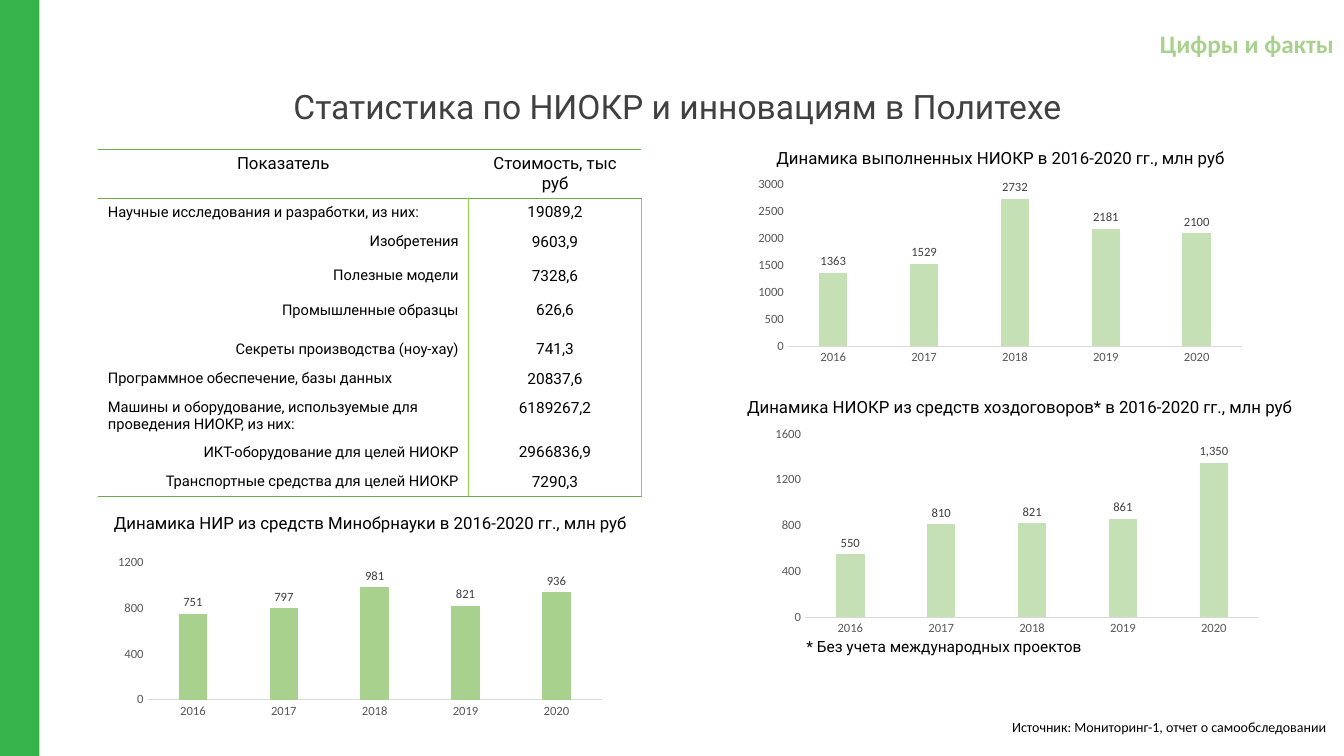
from dataclasses import dataclass

from lxml import etree
from pptx import Presentation
from pptx.chart.data import CategoryChartData
from pptx.dml.color import RGBColor
from pptx.enum.chart import XL_CHART_TYPE, XL_LABEL_POSITION, XL_TICK_MARK
from pptx.enum.shapes import MSO_SHAPE
from pptx.enum.text import MSO_AUTO_SIZE, PP_ALIGN
from pptx.oxml.ns import qn
from pptx.util import Inches, Pt

LEFT, CENTER, RIGHT = PP_ALIGN.LEFT, PP_ALIGN.CENTER, PP_ALIGN.RIGHT
COLUMNS = XL_CHART_TYPE.COLUMN_CLUSTERED
OUTSIDE = XL_LABEL_POSITION.OUTSIDE_END
NO_TICK = XL_TICK_MARK.NONE
GROW, FIXED = MSO_AUTO_SIZE.SHAPE_TO_FIT_TEXT, MSO_AUTO_SIZE.NONE

COLORS = {
    "band": "37B34B", "leaf": "A9D18E", "pale": "C5E0B4", "rule": "70AD47",
    "lime": "92D050", "black": "000000", "title": "404040", "axis": "595959",
    "axis_line": "D9D9D9",
}
BODY_FONT, CHART_FONT = "Roboto", "Calibri"
YEARS = ["2016", "2017", "2018", "2019", "2020"]


@dataclass
class Label:
    text: str
    left: float
    top: float
    width: float
    height: float
    size: float = 12
    align: PP_ALIGN = CENTER
    font: str = BODY_FONT
    color: str = "black"
    bold: bool = False
    line_spacing: float = 1.0
    auto_size: MSO_AUTO_SIZE = GROW


@dataclass
class YearChart:
    left: float
    top: float
    height: float
    values: list[int]
    color: str
    axis_max: int
    axis_step: int
    label_format: str = "0"


@dataclass
class Indicator:
    name: str
    cost: str
    height: float = 0.29
    nested: bool = False


LABELS = [
    Label("Цифры и факты", 10.76, 0.23, 2.57, 0.4, 18, RIGHT, CHART_FONT, "leaf", True),
    Label("Статистика по НИОКР и инновациям в Политехе", 0.97, 0.85, 11.5, 1.45, 24,
          color="title", line_spacing=0.9, auto_size=FIXED),
    Label("Источник: Мониторинг-1, отчет о самообследовании", 7.59, 7.08, 5.66, 0.27, 10,
          RIGHT, CHART_FONT),
    Label("Динамика выполненных НИОКР в 2016-2020 гг., млн руб", 7.05, 1.42, 5.75, 0.3),
    Label("Динамика НИОКР из средств хоздоговоров* в 2016-2020 гг., млн руб",
          7.24, 3.89, 5.75, 0.3),
    Label("* Без учета международных проектов", 7.9, 6.27, 5.18, 0.29, 11, LEFT),
    Label("Динамика НИР из средств Минобрнауки в 2016-2020 гг., млн руб",
          0.8, 5.04, 5.75, 0.3),
]

CHARTS = [
    YearChart(7.42, 1.72, 1.94, [1363, 1529, 2732, 2181, 2100], "pale", 3000, 500),
    YearChart(7.59, 4.19, 2.16, [550, 810, 821, 861, 1350], "pale", 1600, 400, "#,##0"),
    YearChart(1.07, 5.47, 1.69, [751, 797, 981, 821, 936], "leaf", 1200, 400),
]

INDICATORS = [
    Indicator("Научные исследования и разработки, из них:", "19089,2"),
    Indicator("Изобретения", "9603,9", 0.34, True),
    Indicator("Полезные модели", "7328,6", 0.34, True),
    Indicator("Промышленные образцы", "626,6", 0.39, True),
    Indicator("Секреты производства (ноу-хау)", "741,3", nested=True),
    Indicator("Программное обеспечение, базы данных", "20837,6"),
    Indicator("Машины и оборудование, используемые для проведения НИОКР, из них:",
              "6189267,2", 0.43),
    Indicator("ИКТ-оборудование для целей НИОКР", "2966836,9", nested=True),
    Indicator("Транспортные средства для целей НИОКР", "7290,3", nested=True),
]


def rgb(name: str) -> RGBColor:
    return RGBColor.from_string(COLORS[name])


def style_font(font, name: str, size: float, color: str, bold: bool = False) -> None:
    font.name, font.size, font.bold = name, Pt(size), bold
    font.color.rgb = rgb(color)


def write(frame, text: str, align: PP_ALIGN, font: str, size: float,
          color: str = "black", bold: bool = False) -> None:
    para = frame.paragraphs[0]
    para.alignment = align
    span = para.add_run()
    span.text = text
    style_font(span.font, font, size, color, bold)


def add_label(slide, label: Label) -> None:
    box = slide.shapes.add_textbox(Inches(label.left), Inches(label.top),
                                   Inches(label.width), Inches(label.height))
    frame = box.text_frame
    frame.word_wrap = True
    frame.auto_size = label.auto_size
    write(frame, label.text, label.align, label.font, label.size, label.color, label.bold)
    frame.paragraphs[0].line_spacing = label.line_spacing


def add_year_chart(slide, item: YearChart) -> None:
    data = CategoryChartData()
    data.categories = YEARS
    data.add_series("Series 1", item.values)
    chart = slide.shapes.add_chart(COLUMNS, Inches(item.left), Inches(item.top),
                                   Inches(5), Inches(item.height), data).chart
    chart.has_legend = chart.has_title = False
    style_font(chart.font, CHART_FONT, 10, "black")

    for axis in (chart.category_axis, chart.value_axis):
        axis.has_major_gridlines = False
        axis.major_tick_mark = axis.minor_tick_mark = NO_TICK
        style_font(axis.tick_labels.font, CHART_FONT, 9, "axis")
    chart.category_axis.format.line.color.rgb = rgb("axis_line")
    chart.category_axis.format.line.width = Pt(0.75)
    values = chart.value_axis
    values.format.line.fill.background()
    values.minimum_scale, values.maximum_scale = 0, item.axis_max
    values.major_unit = item.axis_step
    values.tick_labels.number_format = "0"
    values.tick_labels.number_format_is_linked = False

    plot = chart.plots[0]
    plot.gap_width, plot.overlap, plot.vary_by_categories = 219, -27, False
    bars = plot.series[0]
    bars.format.fill.solid()
    bars.format.fill.fore_color.rgb = rgb(item.color)
    labels = bars.data_labels
    labels.show_value, labels.position = True, OUTSIDE
    labels.number_format, labels.number_format_is_linked = item.label_format, False
    style_font(labels.font, CHART_FONT, 9, "title")


def set_borders(cell, borders: dict[str, str]) -> None:
    """Draw the named sides (L, R, T, B) and hide the others."""
    properties = cell._tc.get_or_add_tcPr()
    for side in "LRTB":
        line = etree.SubElement(properties, qn(f"a:ln{side}"), w=str(Pt(1)))
        if side in borders:
            fill = etree.SubElement(line, qn("a:solidFill"))
            etree.SubElement(fill, qn("a:srgbClr"), val=COLORS[borders[side]])
        else:
            etree.SubElement(line, qn("a:noFill"))


def add_cost_table(slide) -> None:
    rows = [Indicator("Показатель", "Стоимость, тыс руб", 0.33), *INDICATORS]
    table = slide.shapes.add_table(len(rows), 2, Inches(0.97), Inches(1.48), Inches(5.39),
                                   Inches(sum(row.height for row in rows))).table
    table.first_row = table.horz_banding = False
    table.columns[0].width, table.columns[1].width = Inches(3.68), Inches(1.71)
    for index, row in enumerate(rows):
        table.rows[index].height = Inches(row.height)
        header = index == 0
        name_align = CENTER if header else RIGHT if row.nested else LEFT
        cells = [(row.name, name_align, 10.5, "R"), (row.cost, CENTER, 11, "LR")]
        for column, (text, align, size, sides) in enumerate(cells):
            cell = table.cell(index, column)
            borders = {} if header else dict.fromkeys(sides, "lime")
            if index <= 1:
                borders["T"] = "rule"
            if header or index == len(rows) - 1:
                borders["B"] = "rule"
            set_borders(cell, borders)
            cell.fill.background()
            write(cell.text_frame, text, align, BODY_FONT, 12 if header else size)


def main() -> None:
    deck = Presentation()
    deck.slide_width, deck.slide_height = Inches(13.33), Inches(7.5)
    page = deck.slides.add_slide(deck.slide_layouts[6])
    band = page.shapes.add_shape(MSO_SHAPE.RECTANGLE, 0, 0, Inches(0.39), Inches(7.5))
    band.shadow.inherit = False
    band.fill.solid()
    band.fill.fore_color.rgb = rgb("band")
    band.line.fill.background()
    add_cost_table(page)
    for chart in CHARTS:
        add_year_chart(page, chart)
    for label in LABELS:
        add_label(page, label)
    deck.save("out.pptx")


if __name__ == "__main__":
    main()
